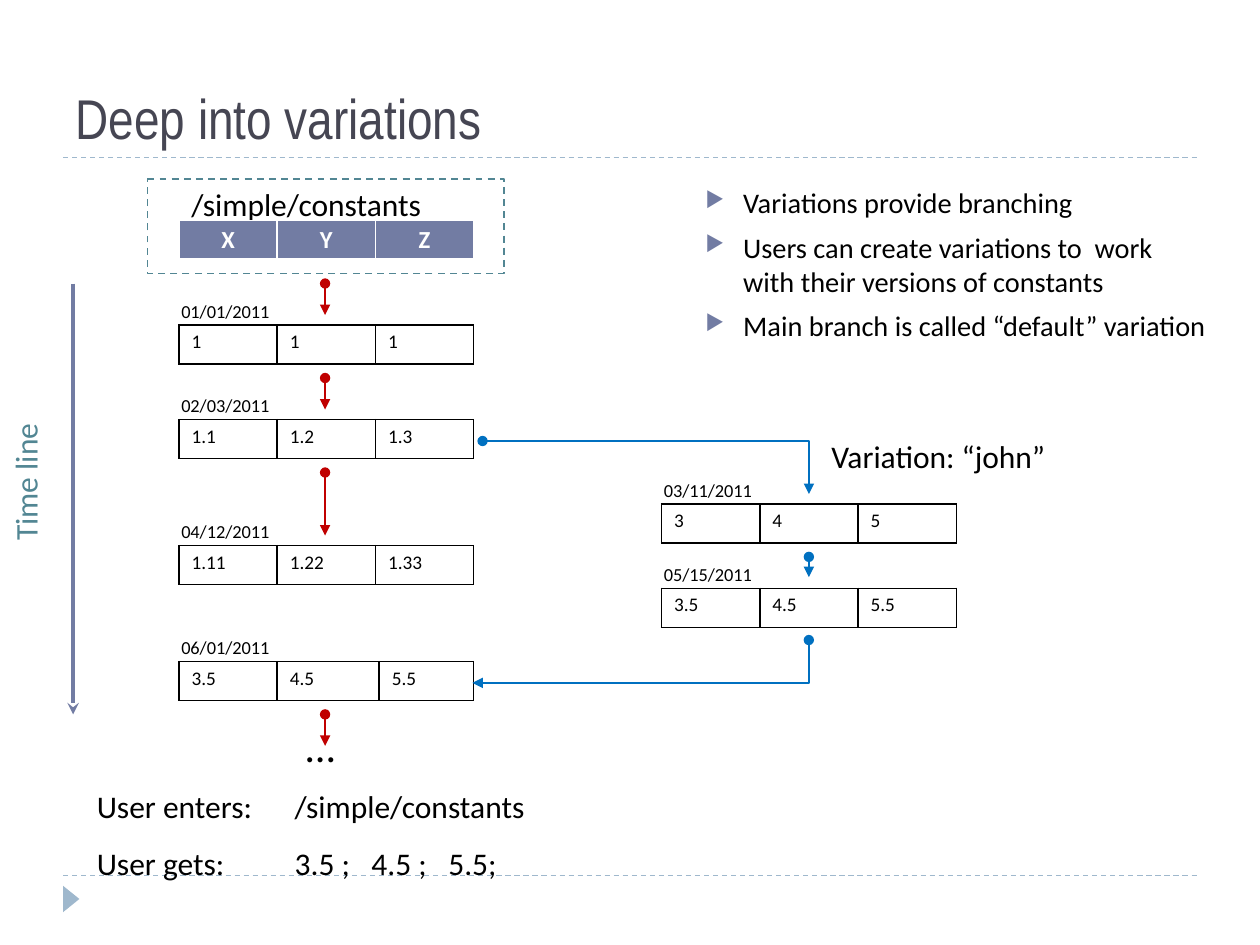
from lxml.etree import SubElement
from pptx import Presentation
from pptx.dml.color import RGBColor
from pptx.enum.dml import MSO_LINE
from pptx.enum.shapes import MSO_CONNECTOR as LINK, MSO_SHAPE as SHAPE
from pptx.enum.text import MSO_ANCHOR as ANCHOR, MSO_AUTO_SIZE as FIT, PP_ALIGN as ALIGN
from pptx.oxml.ns import qn
from pptx.util import Inches, Pt

BLACK, WHITE = "000000", "FFFFFF"
SLATE, TEAL, PALE = "727CA3", "528693", "9FB8CD"
RED, BLUE = "C00000", "0070C0"
rgb = RGBColor.from_string

prs = Presentation()
prs.slide_width, prs.slide_height = Inches(10), Inches(7.5)
slide = prs.slides.add_slide(prs.slide_layouts[5])
shapes = slide.shapes


def add_label(text, left, top, width, height, size, color=BLACK):
    label = shapes.add_textbox(Inches(left), Inches(top), Inches(width), Inches(height))
    label.text_frame.text = text
    label.text_frame.word_wrap = False
    label.text_frame.auto_size = FIT.SHAPE_TO_FIT_TEXT
    font = label.text_frame.paragraphs[0].runs[0].font
    font.size, font.name = Pt(size), "Calibri"
    font.color.rgb = rgb(color)
    return label


def add_line(start, end, color, width, head=None, tail=None, bend=None):
    """Add a straight line, or an elbow that turns at the fraction bend of its width."""
    kind = LINK.STRAIGHT if bend is None else LINK.ELBOW
    link = shapes.add_connector(kind, *map(Inches, start + end))
    link.line.color.rgb = rgb(color)
    link.line.width = Pt(width)
    properties = link.element.spPr
    outline = properties.find(qn("a:ln"))
    for tag, arrow in (("a:headEnd", head), ("a:tailEnd", tail)):
        if arrow:
            SubElement(outline, qn(tag), type=arrow)
    if bend is not None:
        guides = properties.find(qn("a:prstGeom")).find(qn("a:avLst"))
        SubElement(guides, qn("a:gd"), name="adj1", fmla=f"val {round(bend * 100000)}")
    SubElement(properties, qn("a:effectLst"))
    return link


# Frame of the page: two dashed rules and the corner mark
for rule_y in (6.95, 1.25):
    rule = add_line((0.5, rule_y), (9.5, rule_y), PALE, 0.75)
    rule.line.dash_style = MSO_LINE.DASH
corner = shapes.add_shape(SHAPE.ISOSCELES_TRIANGLE, Inches(0.46), Inches(7.07), Inches(0.21), Inches(0.13))
corner.rotation = 90
corner.shadow.inherit = False
corner.fill.solid()
corner.fill.fore_color.rgb = rgb(PALE)
corner.line.fill.background()

title = shapes.title
title.left, title.top, title.width, title.height = map(Inches, (0.5, 0.17, 9, 1.08))
title.text_frame.text = "Deep into variations"
title.text_frame.vertical_anchor = ANCHOR.BOTTOM
title.text_frame.auto_size = FIT.NONE
heading = title.text_frame.paragraphs[0]
heading.alignment = ALIGN.LEFT
heading.font.size, heading.font.name = Pt(32), "Arial Narrow"
heading.font.color.rgb = rgb("464653")

# Time line
add_line((0.58, 2.25), (0.58, 5.67), SLATE, 2.25, tail="stealth")
add_label("Time line", -0.37, 3.62, 1.14, 0.4, 18, TEAL).rotation = 270

# Constants and their dated versions
constants_box = shapes.add_shape(SHAPE.FLOWCHART_PROCESS, Inches(1.17), Inches(1.42), Inches(2.83), Inches(0.75))
constants_box.shadow.inherit = False
constants_box.fill.solid()
constants_box.fill.fore_color.rgb = rgb(WHITE)
constants_box.line.color.rgb = rgb(TEAL)
constants_box.line.width = Pt(1)
constants_box.line.dash_style = MSO_LINE.DASH
add_label("/simple/constants", 1.42, 1.42, 2.1, 0.4, 18)

MAIN, JOHN = 1.42, 5.25
EVEN = (0.78, 0.78, 0.78)
versions = [
    (None, MAIN, 1.75, "X Y Z", EVEN),
    ("01/01/2011", MAIN, 2.58, "1 1 1", EVEN),
    ("02/03/2011", MAIN, 3.33, "1.1 1.2 1.3", EVEN),
    ("03/11/2011", JOHN, 4, "3 4 5", EVEN),
    ("04/12/2011", MAIN, 4.33, "1.11 1.22 1.33", EVEN),
    ("05/15/2011", JOHN, 4.67, "3.5 4.5 5.5", EVEN),
    ("06/01/2011", MAIN, 5.25, "3.5 4.5 5.5", (0.78, 0.81, 0.75)),
]
for date, left, top, values, widths in versions:
    is_header = date is None
    table = shapes.add_table(1, 3, Inches(left), Inches(top), Inches(2.33), Inches(0.31)).table
    table.first_row = table.horz_banding = False
    for column, width, cell, value in zip(table.columns, widths, table.rows[0].cells, values.split()):
        column.width = Inches(width)
        cell.text = value
        cell.margin_top = cell.margin_bottom = Inches(0.04)
        text = cell.text_frame.paragraphs[0]
        text.font.name = "Calibri"
        text.font.size = Pt(14 if is_header else 11)
        text.font.bold = is_header
        text.font.color.rgb = rgb(WHITE if is_header else BLACK)
        text.alignment = ALIGN.CENTER if is_header else ALIGN.LEFT
        for side in "LRTB":
            weight = Pt(3 if is_header and side == "B" else 1)
            border = SubElement(cell._tc.get_or_add_tcPr(), qn(f"a:ln{side}"), w=str(weight))
            paint = SubElement(border, qn("a:solidFill"))
            SubElement(paint, qn("a:srgbClr"), val=WHITE if is_header else BLACK)
        if is_header:
            cell.fill.solid()
            cell.fill.fore_color.rgb = rgb(SLATE)
        else:
            cell.fill.background()
    if date:
        add_label(date, left - 0.08, top - 0.25, 0.92, 0.28, 10.5)

# Steps within and between the branches
steps = [
    ((2.58, 2.25), (2.58, 2.5), RED, None),
    ((2.58, 3), (2.58, 3.25), RED, None),
    ((2.58, 3.75), (2.58, 4.25), RED, None),
    ((2.58, 5.67), (2.58, 5.92), RED, None),
    ((6.42, 4.42), (6.42, 4.58), BLUE, None),
    ((3.83, 3.5), (6.42, 3.92), BLUE, 1),
    ((6.42, 5.08), (3.75, 5.42), BLUE, 0),
]
for start, end, color, bend in steps:
    add_line(start, end, color, 1.5, "oval", "triangle", bend)
add_label("Variation: “john”", 6.5, 3.42, 1.92, 0.4, 18)
add_label("…", 2.33, 5.67, 0.44, 0.5, 24)

# Key points
points = shapes.add_textbox(Inches(5.5), Inches(1.42), Inches(4.25), Inches(1.17)).text_frame
points.word_wrap = True
points.text = "\n".join([
    "Variations provide branching",
    "Users can create variations to  work \vwith their versions of constants",
    "Main branch is called “default” variation",
])
for point in points.paragraphs:
    point.space_before = Pt(6)
    for run in point.runs:
        run.font.size, run.font.name = Pt(16.2), "Calibri"
        run.font.color.rgb = rgb(BLACK)
    layout = point._p.get_or_add_pPr()
    layout.set("marL", str(Inches(0.3)))
    layout.set("indent", str(Inches(-0.3)))
    SubElement(SubElement(layout, qn("a:buClr")), qn("a:srgbClr"), val=SLATE)
    SubElement(layout, qn("a:buSzPct"), val="76000")
    SubElement(layout, qn("a:buChar"), char="▶")

# Example of use
example = shapes.add_shape(SHAPE.RECTANGLE, Inches(0.67), Inches(6.17), Inches(6.5), Inches(0.75))
example.shadow.inherit = False
example.fill.solid()
example.fill.fore_color.rgb = rgb(WHITE)
example.line.color.rgb = rgb(WHITE)
example.line.width = Pt(1.5)
example.text_frame.text = ""
example.text_frame.vertical_anchor = ANCHOR.MIDDLE
usage = example.text_frame.paragraphs[0]
usage.text = "User enters:\t/simple/constants\vUser gets:\t3.5 ;\t4.5 ;\t5.5;"
usage.alignment = ALIGN.LEFT
usage.line_spacing = 1.5
for run in usage.runs:
    run.font.size, run.font.name = Pt(18), "Calibri"
    run.font.color.rgb = rgb(BLACK)
tabs = SubElement(usage._p.get_or_add_pPr(), qn("a:tabLst"))
for stop in (1.57, 2.18, 2.79):
    SubElement(tabs, qn("a:tab"), pos=str(Inches(stop)), algn="l")

prs.save("out.pptx")
